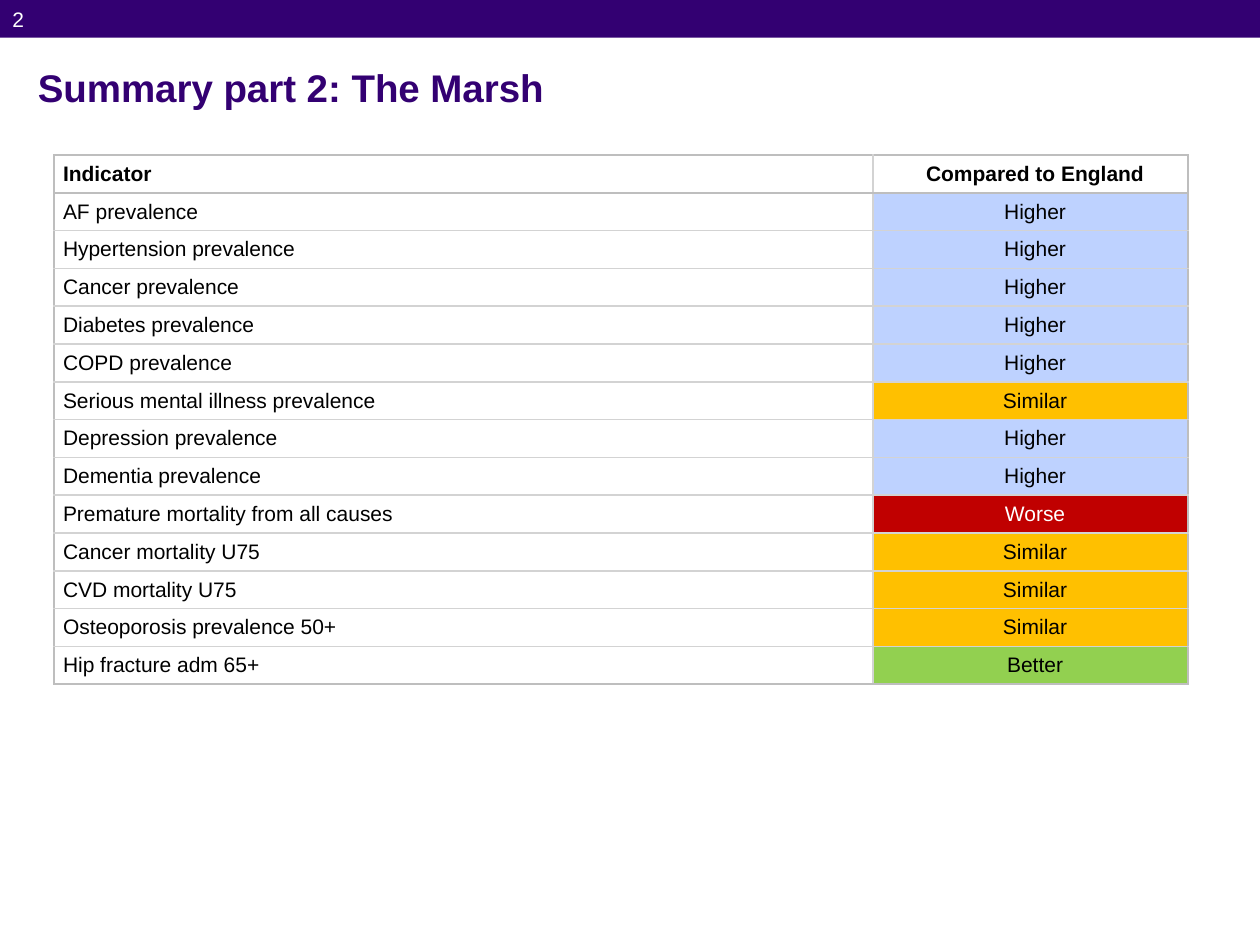
from dataclasses import dataclass

from lxml import etree
from pptx import Presentation
from pptx.dml.color import RGBColor
from pptx.enum.shapes import MSO_SHAPE
from pptx.enum.text import MSO_ANCHOR, PP_ALIGN
from pptx.oxml.ns import qn
from pptx.util import Inches, Pt

RECTANGLE = MSO_SHAPE.RECTANGLE
LEFT, CENTER = PP_ALIGN.LEFT, PP_ALIGN.CENTER
TOP, MIDDLE = MSO_ANCHOR.TOP, MSO_ANCHOR.MIDDLE
TITLE_ONLY = 5


@dataclass(frozen=True)
class Theme:
    font: str = "Arial"
    title_size: int = 22
    body_size: int = 12
    purple: str = "330072"
    black: str = "000000"
    white: str = "FFFFFF"
    outer_line: str = "BEBEBE"
    inner_line: str = "D3D3D3"


# Fill and text colour for each rating
RATINGS = {
    "Higher": ("BED2FF", Theme.black),
    "Similar": ("FFC000", Theme.black),
    "Worse": ("C00000", Theme.white),
    "Better": ("92D050", Theme.black),
}

HEADER = ("Indicator", "Compared to England")
INDICATORS = [
    ("AF prevalence", "Higher"),
    ("Hypertension prevalence", "Higher"),
    ("Cancer prevalence", "Higher"),
    ("Diabetes prevalence", "Higher"),
    ("COPD prevalence", "Higher"),
    ("Serious mental illness prevalence", "Similar"),
    ("Depression prevalence", "Higher"),
    ("Dementia prevalence", "Higher"),
    ("Premature mortality from all causes", "Worse"),
    ("Cancer mortality U75", "Similar"),
    ("CVD mortality U75", "Similar"),
    ("Osteoporosis prevalence 50+", "Similar"),
    ("Hip fracture adm 65+", "Better"),
]


class SlideBuilder:
    def __init__(self, page, theme):
        self.page = page
        self.theme = theme

    def add_span(self, para, text, size, color, bold=False, align=LEFT):
        para.alignment = align
        span = para.add_run()
        span.text = text
        span.font.name = self.theme.font
        span.font.size = Pt(size)
        span.font.bold = bold
        span.font.color.rgb = RGBColor.from_string(color)

    def bar(self, left, top, width, height):
        bar = self.page.shapes.add_shape(
            RECTANGLE, Inches(left), Inches(top), Inches(width), Inches(height))
        bar.shadow.inherit = False
        bar.fill.solid()
        bar.fill.fore_color.rgb = RGBColor.from_string(self.theme.purple)
        bar.line.fill.background()

    def title(self, text, left, top, width, height):
        title = self.page.shapes.title
        title.left, title.top = Inches(left), Inches(top)
        title.width, title.height = Inches(width), Inches(height)
        title.text_frame.vertical_anchor = MIDDLE
        self.add_span(title.text_frame.paragraphs[0], text,
                      self.theme.title_size, self.theme.purple, bold=True)

    def page_number(self, text, left, top, width, height):
        box = self.page.shapes.add_textbox(
            Inches(left), Inches(top), Inches(width), Inches(height))
        box.text_frame.word_wrap = True
        box.text_frame.vertical_anchor = TOP
        para = box.text_frame.paragraphs[0]
        para.space_before, para.space_after = Pt(2.4), Pt(4.9)
        self.add_span(para, text, self.theme.body_size, self.theme.white)

    def border(self, cell, side, color):
        props = cell._tc.get_or_add_tcPr()
        line = etree.SubElement(props, qn(f"a:ln{side}"), w=str(Pt(1)))
        fill = etree.SubElement(line, qn("a:solidFill"))
        etree.SubElement(fill, qn("a:srgbClr"), val=color)

    def cell(self, cell, text, edges, align, bold):
        fill, color = RATINGS.get(text, (None, self.theme.black))
        cell.margin_left = cell.margin_right = 0
        cell.margin_top = cell.margin_bottom = 0
        cell.vertical_anchor = MIDDLE
        # Borders come before the fill in the cell properties
        for side in "LRTB":
            on_edge = side in edges
            self.border(cell, side, self.theme.outer_line if on_edge
                        else self.theme.inner_line)
        if fill:
            cell.fill.solid()
            cell.fill.fore_color.rgb = RGBColor.from_string(fill)
        else:
            cell.fill.background()
        para = cell.text_frame.paragraphs[0]
        para.space_before = para.space_after = Pt(5)
        props = para._p.get_or_add_pPr()
        props.set("marL", str(Inches(0.07)))
        props.set("indent", "0")
        self.add_span(para, text, self.theme.body_size, color, bold, align)

    def table(self, rows, left, top, column_widths, row_height):
        table = self.page.shapes.add_table(
            len(rows), len(column_widths), Inches(left), Inches(top),
            Inches(sum(column_widths)), Inches(row_height * len(rows))).table
        table.first_row = table.horz_banding = False
        for column, width in zip(table.columns, column_widths):
            column.width = Inches(width)
        for r, row in enumerate(rows):
            table.rows[r].height = Inches(row_height)
            # Darker lines frame the table and the header
            row_edges = "T" if r <= 1 else ""
            row_edges += "B" if r in (0, len(rows) - 1) else ""
            for c, text in enumerate(row):
                self.cell(table.cell(r, c), text, row_edges + "LR"[c],
                          CENTER if c else LEFT, bold=r == 0)


def main():
    deck = Presentation()
    deck.slide_width, deck.slide_height = Inches(10), Inches(7.5)
    page = deck.slides.add_slide(deck.slide_layouts[TITLE_ONLY])
    builder = SlideBuilder(page, Theme())

    # Top band, title and page number
    builder.bar(0, 0, 10, 0.3)
    builder.title("Summary part 2: The Marsh", 0.2, 0.47, 9.61, 0.45)
    builder.page_number("2", 0, 0, 0.63, 0.63)

    # Indicator table
    builder.table([HEADER, *INDICATORS], 0.43, 1.23, (6.5, 2.5), 0.3)

    deck.save("out.pptx")


if __name__ == "__main__":
    main()
